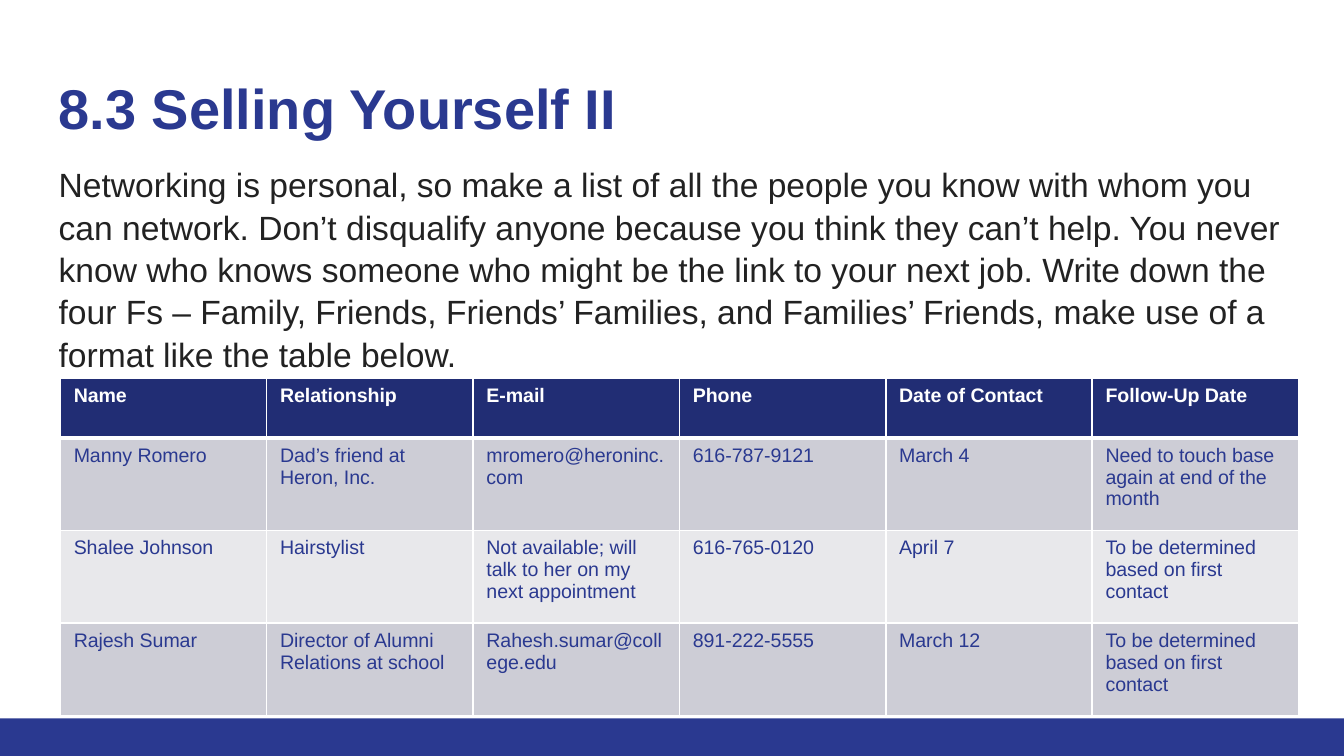
from lxml import etree
from pptx import Presentation
from pptx.dml.color import RGBColor
from pptx.enum import shapes, text
from pptx.oxml import ns
from pptx.util import Cm, Pt

BLUE = RGBColor(0x2A, 0x39, 0x90)
NAVY = RGBColor(0x21, 0x2D, 0x74)
INK = RGBColor(0x22, 0x22, 0x22)
WHITE = RGBColor(0xFF, 0xFF, 0xFF)
GREY = RGBColor(0xCD, 0xCD, 0xD6)
PALE = RGBColor(0xE8, 0xE8, 0xEB)

CONTACTS = [
    ["Name", "Relationship", "E-mail", "Phone", "Date of Contact", "Follow-Up Date"],
    ["Manny Romero", "Dad’s friend at Heron, Inc.", "mromero@heroninc.com",
     "616-787-9121", "March 4", "Need to touch base again at end of the month"],
    ["Shalee Johnson", "Hairstylist", "Not available; will talk to her on my next appointment",
     "616-765-0120", "April 7", "To be determined based on first contact"],
    ["Rajesh Sumar", "Director of Alumni Relations at school", "Rahesh.sumar@college.edu",
     "891-222-5555", "March 12", "To be determined based on first contact"],
]
ROW_FILLS = [NAVY, GREY, PALE, GREY]


def style_text(para, size, color, bold=False):
    for span in para.runs:
        span.font.name = "Arial"
        span.font.size = Pt(size)
        span.font.color.rgb = color
        span.font.bold = bold


def add_text(page, left, top, width, height, words):
    box = page.shapes.add_textbox(Cm(left), Cm(top), Cm(width), Cm(height))
    frame = box.text_frame
    frame.word_wrap = True
    frame.vertical_anchor = text.MSO_ANCHOR.TOP
    frame.margin_left = frame.margin_right = Cm(0.25)
    frame.margin_top = frame.margin_bottom = Cm(0.25)
    frame.text = words
    return frame.paragraphs[0]


deck = Presentation()
deck.slide_width = Cm(25.4)
deck.slide_height = Cm(14.29)
page = deck.slides.add_slide(deck.slide_layouts[6])

footer = page.shapes.add_shape(
    shapes.MSO_SHAPE.RECTANGLE, 0, Cm(13.58), deck.slide_width, Cm(0.71))
footer.shadow.inherit = False
footer.fill.solid()
footer.fill.fore_color.rgb = BLUE
footer.line.fill.background()

title = add_text(page, 0.86, 1.14, 23.67, 1.68, "8.3 Selling Yourself II")
style_text(title, 30, BLUE, True)

advice = add_text(
    page, 0.56, 2.82, 24.3, 4.88,
    "Networking is personal, so make a list of all the people you know with whom you "
    "can network. Don’t disqualify anyone because you think they can’t help. You never "
    "know who knows someone who might be the link to your next job. Write down the "
    "four Fs – Family, Friends, Friends’ Families, and Families’ Friends, make use of a "
    "format like the table below.")
advice.line_spacing = 1.05
advice_format = advice._p.get_or_add_pPr()
advice_format.set("marL", str(Cm(0.3)))
advice_format.set("indent", "0")
style_text(advice, 18, INK)

table = page.shapes.add_table(
    len(CONTACTS), len(CONTACTS[0]), Cm(1.14), Cm(7.14), Cm(23.4), Cm(6.39)).table
for column in table.columns:
    column.width = Cm(3.9)
for row in table.rows:
    row.height = Cm(1.75)
table.rows[0].height = Cm(1.14)

for row_index, (entries, fill) in enumerate(zip(CONTACTS, ROW_FILLS)):
    header = row_index == 0
    for column_index, entry in enumerate(entries):
        cell = table.cell(row_index, column_index)
        cell.text_frame.text = entry
        style_text(cell.text_frame.paragraphs[0], 10.5, WHITE if header else BLUE, header)
        cell.fill.solid()
        cell.fill.fore_color.rgb = fill
        properties = cell._tc.get_or_add_tcPr()
        for position, side in enumerate(["lnL", "lnR", "lnT", "lnB"]):
            thick = (header and side == "lnB") or (row_index == 1 and side == "lnT")
            border = etree.Element(ns.qn(f"a:{side}"), w=str(Pt(3 if thick else 1)))
            solid = etree.SubElement(border, ns.qn("a:solidFill"))
            etree.SubElement(solid, ns.qn("a:srgbClr"), val=str(WHITE))
            properties.insert(position, border)

deck.save("out.pptx")
